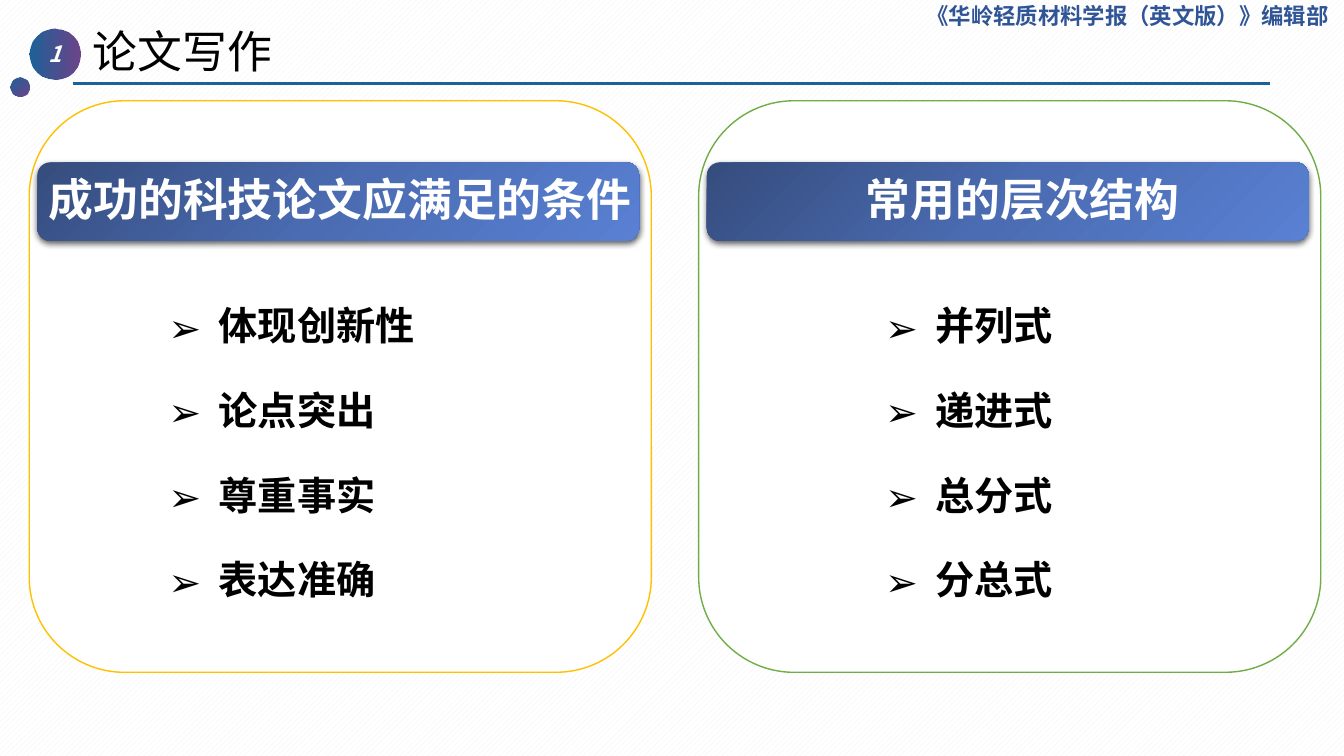
from lxml.etree import SubElement
from pptx import Presentation
from pptx.dml.color import RGBColor
from pptx.enum.dml import MSO_PATTERN as Pattern
from pptx.enum.shapes import MSO_CONNECTOR as Connector, MSO_SHAPE as Shape
from pptx.enum.text import MSO_ANCHOR as Anchor, MSO_AUTO_SIZE as AutoSize, PP_ALIGN as Align
from pptx.oxml.ns import qn
from pptx.util import Inches, Pt

FONT = "Noto Sans CJK SC"
BLACK = RGBColor(0x00, 0x00, 0x00)
WHITE = RGBColor(0xFF, 0xFF, 0xFF)
PALE_GREY = RGBColor(0xF2, 0xF2, 0xF2)
TEAL = RGBColor(0x1C, 0x62, 0x99)
PURPLE = RGBColor(0x5C, 0x30, 0x7D)
NAVY = RGBColor(0x2F, 0x55, 0x97)
GOLD = RGBColor(0xFF, 0xC0, 0x00)
GREEN = RGBColor(0x70, 0xAD, 0x47)
BADGE_STOPS = [(0, TEAL, 100), (100, PURPLE, 90)]
HEADER_STOPS = [
    (0, RGBColor(0x35, 0x4C, 0x7D), 100),
    (50, RGBColor(0x4B, 0x6C, 0xB2), 100),
    (100, RGBColor(0x59, 0x80, 0xD3), 100),
]
CARD_WIDTH, CARD_HEIGHT = 6.17, 5.67


def add_text(para, text, size, color, bold=False, italic=False):
    span = para.add_run()
    span.text = text
    font = span.font
    font.name, font.size, font.bold, font.italic = FONT, Pt(size), bold, italic
    font.color.rgb = color
    SubElement(font._element, qn("a:ea")).set("typeface", FONT)


def set_frame(shape, anchor, wrap=True):
    frame = shape.text_frame
    frame.auto_size = AutoSize.NONE
    frame.word_wrap = wrap
    frame.vertical_anchor = anchor
    frame.margin_left = frame.margin_right = frame.margin_top = frame.margin_bottom = 0
    return frame


def place(shape, left, top, width, height):
    shape.left, shape.top = Inches(left), Inches(top)
    shape.width, shape.height = Inches(width), Inches(height)
    shape.element.getparent().append(shape.element)


def add_form(page, kind, left, top, width, height):
    shape = page.shapes.add_shape(kind, Inches(left), Inches(top), Inches(width), Inches(height))
    shape.shadow.inherit = False
    shape.line.fill.background()
    return shape


def fill_gradient(shape, stops, angle):
    shape.fill.gradient()
    gradient = shape.element.spPr.find(qn("a:gradFill"))
    stop_list = gradient.find(qn("a:gsLst"))
    stop_list.clear()
    for position, color, opacity in stops:
        stop = SubElement(stop_list, qn("a:gs"), pos=str(position * 1000))
        tint = SubElement(stop, qn("a:srgbClr"), val=str(color))
        SubElement(tint, qn("a:alpha"), val=str(opacity * 1000))
    gradient.find(qn("a:lin")).set("ang", str(angle * 60000))


def add_shadow(shape):
    effects = shape.element.spPr.find(qn("a:effectLst"))
    shadow = SubElement(effects, qn("a:outerShdw"), blurRad=str(Pt(4.5)), dist=str(Pt(1.5)),
                        dir="5400000", algn="ctr", rotWithShape="0")
    tint = SubElement(shadow, qn("a:srgbClr"), val=str(BLACK))
    SubElement(tint, qn("a:alpha"), val="63000")


def add_banner(page, left, top, number, title, journal):
    place(page.shapes.title, left + 0.82, top + 0.18, 3.95, 0.64)
    para = set_frame(page.shapes.title, Anchor.MIDDLE).paragraphs[0]
    para.alignment = Align.LEFT
    add_text(para, title, 32, BLACK)

    rule = page.shapes.add_connector(Connector.STRAIGHT, Inches(left + 0.62), Inches(top + 0.83),
                                     Inches(left + 12.5), Inches(top + 0.83))
    rule.line.color.rgb = TEAL
    rule.line.width = Pt(1.75)
    SubElement(rule.element.spPr, qn("a:effectLst"))

    badge = add_form(page, Shape.OVAL, left + 0.19, top + 0.28, 0.51, 0.51)
    fill_gradient(badge, BADGE_STOPS, 0)
    para = set_frame(badge, Anchor.MIDDLE, False).paragraphs[0]
    para.alignment = Align.CENTER
    add_text(para, number, 16, WHITE, True, True)
    dot = add_form(page, Shape.OVAL, left, top + 0.77, 0.19, 0.19)
    fill_gradient(dot, BADGE_STOPS, 50)

    box = page.shapes.add_textbox(Inches(left + 9.09), Inches(top), Inches(4.1), Inches(0.3))
    add_text(set_frame(box, Anchor.MIDDLE, False).paragraphs[0], journal, 16, NAVY, True)


def add_list(body, left, top, width, height, items):
    place(body, left, top, width, height)
    frame = set_frame(body, Anchor.TOP)
    for index, item in enumerate(items):
        para = frame.add_paragraph() if index else frame.paragraphs[0]
        para.alignment = Align.LEFT
        para.line_spacing = 1.5
        para.space_before = Pt(10)
        properties = para._p.get_or_add_pPr()
        properties.set("marL", str(Inches(0.5)))
        properties.set("indent", str(-Inches(0.5)))
        SubElement(properties, qn("a:buFont"), typeface=FONT)
        SubElement(properties, qn("a:buChar"), char="➢")
        add_text(para, item, 28, BLACK, True)


def add_card(page, body, left, top, color, heading, heading_shift, items, list_left):
    card = add_form(page, Shape.ROUNDED_RECTANGLE, left, top, CARD_WIDTH, CARD_HEIGHT)
    card.fill.solid()
    card.fill.fore_color.rgb = WHITE
    card.line.color.rgb = color
    card.line.width = Pt(1)

    header = add_form(page, Shape.ROUNDED_RECTANGLE, left + 0.08, top + 0.61, 5.97, 0.78)
    fill_gradient(header, HEADER_STOPS, 45)
    add_shadow(header)
    frame = set_frame(header, Anchor.MIDDLE, False)
    frame.margin_left = Inches(2 * heading_shift)
    frame.margin_bottom = Inches(0.06)
    para = frame.paragraphs[0]
    para.alignment = Align.CENTER
    add_text(para, heading, 32, WHITE, True)

    add_list(body, left + list_left, top + 1.76, 3.5, 3.6, items)


def main():
    deck = Presentation()
    deck.slide_width, deck.slide_height = Inches(13.33), Inches(7.5)
    page = deck.slides.add_slide(deck.slide_layouts[3])
    background = page.background.fill
    background.patterned()
    background.pattern = Pattern.WIDE_UPWARD_DIAGONAL
    background.fore_color.rgb = PALE_GREY
    background.back_color.rgb = WHITE

    conditions, structures = page.placeholders[1], page.placeholders[2]
    add_card(page, structures, 6.93, 1, GREEN, "常用的层次结构", 0.15,
             ["并列式", "递进式", "总分式", "分总式"], 1.85)
    add_card(page, conditions, 0.29, 1, GOLD, "成功的科技论文应满足的条件", 0.02,
             ["体现创新性", "论点突出", "尊重事实", "表达准确"], 1.38)
    add_banner(page, 0.1, 0, "1", "论文写作", "《华岭轻质材料学报（英文版）》编辑部")
    deck.save("out.pptx")


if __name__ == "__main__":
    main()
